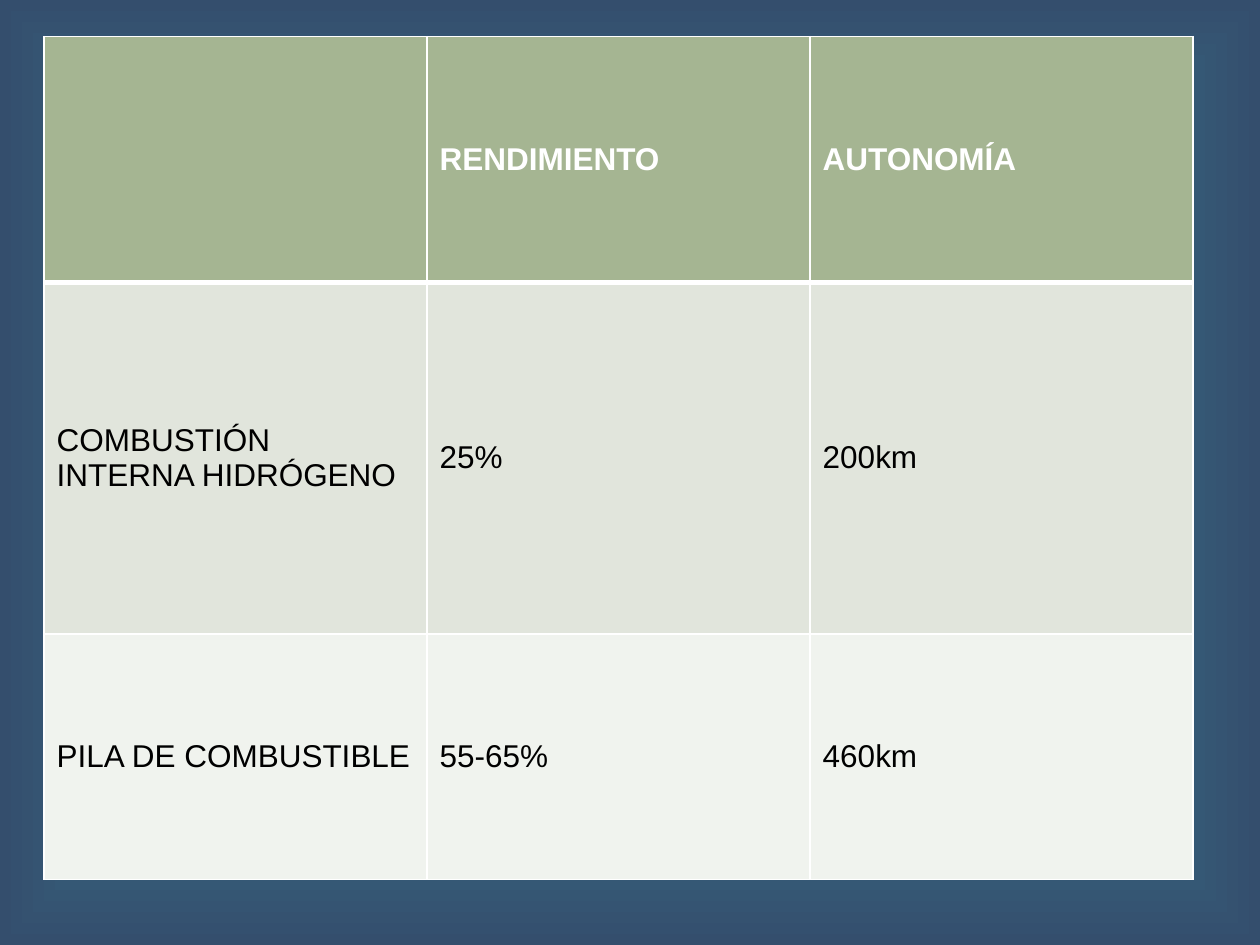
from dataclasses import dataclass

from lxml import etree
from pptx import Presentation
from pptx import util as u
from pptx.dml.color import RGBColor
from pptx.enum import text
from pptx.oxml import ns

WIDTH, HEIGHT = u.Inches(10), u.Inches(7.5)
LEFT, TOP = u.Inches(0.35), u.Inches(0.29)
COLUMN = u.Inches(3.04)
WHITE, BLACK = "FFFFFF", "000000"
THIN, THICK = 1, 3


@dataclass
class Row:
    labels: tuple[str, str, str]
    height: float
    fill: str
    ink: str = BLACK
    bold: bool = False
    top: float = THIN
    bottom: float = THIN


ROWS = [
    Row(("", "RENDIMIENTO", "AUTONOMÍA"), 1.95, "A5B592", WHITE, True, bottom=THICK),
    Row(("COMBUSTIÓN INTERNA HIDRÓGENO", "25%", "200km"), 2.79, "E1E5DC", top=THICK),
    Row(("PILA DE COMBUSTIBLE", "55-65%", "460km"), 1.95, "F0F3EE"),
]


def rgb(code: str) -> RGBColor:
    return RGBColor.from_string(code)


def write(frame, words: str, *, size: float = 18, ink: str = BLACK, bold: bool = False) -> None:
    run = frame.paragraphs[0].add_run()
    run.text = words
    run.font.name = "Arial"
    run.font.size = u.Pt(size)
    run.font.bold = bold
    run.font.color.rgb = rgb(ink)


def add_borders(cell, widths: dict[str, float], colour: str = WHITE) -> None:
    """Insert the cell's border lines ahead of its fill, as the schema asks."""
    properties = cell._tc.get_or_add_tcPr()
    for position, (side, width) in enumerate(widths.items()):
        line = etree.Element(ns.qn(f"a:ln{side}"), w=str(u.Pt(width)))
        solid = etree.SubElement(line, ns.qn("a:solidFill"))
        etree.SubElement(solid, ns.qn("a:srgbClr"), val=colour)
        properties.insert(position, line)


def paint_background(slide, centre: str, edge: str) -> None:
    fill = slide.background.fill
    fill.gradient()
    for stop, colour, position in zip(fill.gradient_stops, (centre, edge), (0, 1)):
        stop.color.rgb = rgb(colour)
        stop.position = position
    # Swap the linear direction for one that spreads from the centre
    linear = next(slide.element.iter(ns.qn("a:lin")))
    spread = etree.Element(ns.qn("a:path"), path="shape")
    etree.SubElement(spread, ns.qn("a:fillToRect"), l="50000", t="50000", r="50000", b="50000")
    linear.getparent().replace(linear, spread)


def add_comparison(slide, rows: list[Row]) -> None:
    columns = len(rows[0].labels)
    total = u.Inches(sum(row.height for row in rows))
    table = slide.shapes.add_table(
        len(rows), columns, LEFT, TOP, COLUMN * columns, total).table
    for column in table.columns:
        column.width = COLUMN
    for r, row in enumerate(rows):
        table.rows[r].height = u.Inches(row.height)
        for c, label in enumerate(row.labels):
            cell = table.cell(r, c)
            cell.vertical_anchor = text.MSO_ANCHOR.MIDDLE
            cell.fill.solid()
            cell.fill.fore_color.rgb = rgb(row.fill)
            add_borders(cell, {"L": THIN, "R": THIN, "T": row.top, "B": row.bottom})
            if label:
                write(cell.text_frame, label, ink=row.ink, bold=row.bold)


def main() -> None:
    deck = Presentation()
    deck.slide_width, deck.slide_height = WIDTH, HEIGHT
    slide = deck.slides.add_slide(deck.slide_layouts[6])
    paint_background(slide, centre="3FA4AF", edge="344E6D")
    add_comparison(slide, ROWS)
    deck.save("out.pptx")


if __name__ == "__main__":
    main()
